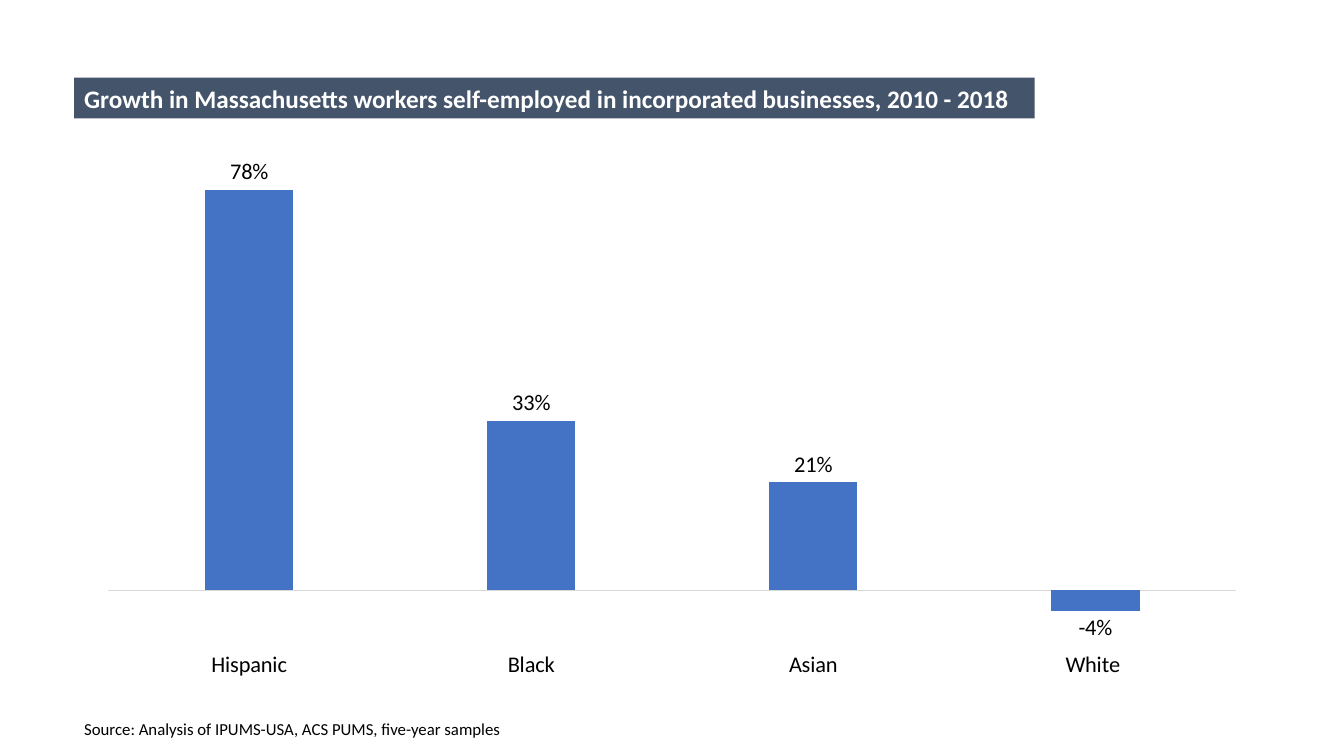
import pptx
import pptx.chart.data
import pptx.dml.color
import pptx.enum.chart
import pptx.enum.shapes
import pptx.enum.text
import pptx.oxml
import pptx.oxml.ns
import pptx.util

Pt = pptx.util.Pt
FONT = "Calibri"
COLOURS = {
    "banner": "44546A",
    "banner_text": "FFFFFF",
    "text": "000000",
    "bar": "4472C4",
    "axis": "D9D9D9",
}
GROWTH = {"Hispanic": 0.78, "Black": 0.33, "Asian": 0.21, "White ": -0.04}


def colour(name):
    """Return the named colour."""
    return pptx.dml.color.RGBColor.from_string(COLOURS[name])


def style_font(font, size, name="text", bold=False):
    """Set the typeface, size, colour and weight of a font."""
    font.name = FONT
    font.size = Pt(size)
    font.bold = bold
    font.color.rgb = colour(name)


def add_banner(slide, left, top, width, height):
    """Place the headline on its dark band."""
    banner = slide.shapes.add_shape(
        pptx.enum.shapes.MSO_SHAPE.RECTANGLE,
        Pt(left), Pt(top), Pt(width), Pt(height))
    banner.shadow.inherit = False
    banner.fill.solid()
    banner.fill.fore_color.rgb = colour("banner")
    banner.line.fill.background()
    banner.text_frame.word_wrap = True
    headline = banner.text_frame.paragraphs[0]
    headline.text = ("Growth in Massachusetts workers self-employed in "
                     "incorporated businesses, 2010 - 2018")
    headline.alignment = pptx.enum.text.PP_ALIGN.LEFT
    style_font(headline.font, 18, "banner_text", bold=True)


def set_plot_layout(chart, x, y, w, h):
    """Fix the inner plot area as fractions of the chart."""
    plot_area = chart._chartSpace.chart.plotArea
    for layout in plot_area.findall(pptx.oxml.ns.qn("c:layout")):
        plot_area.remove(layout)
    plot_area.insert(0, pptx.oxml.parse_xml(
        f'<c:layout {pptx.oxml.ns.nsdecls("c")}><c:manualLayout>'
        '<c:layoutTarget val="inner"/>'
        '<c:xMode val="edge"/><c:yMode val="edge"/>'
        f'<c:x val="{x}"/><c:y val="{y}"/><c:w val="{w}"/><c:h val="{h}"/>'
        '</c:manualLayout></c:layout>'))


def add_growth_chart(slide, left, top, width, height):
    """Place the column chart of growth by group."""
    growth = pptx.chart.data.CategoryChartData(number_format="0%")
    growth.categories = list(GROWTH)
    growth.add_series("Series 1", list(GROWTH.values()))
    chart = slide.shapes.add_chart(
        pptx.enum.chart.XL_CHART_TYPE.COLUMN_CLUSTERED,
        Pt(left), Pt(top), Pt(width), Pt(height), growth).chart
    chart.has_legend = False
    chart.has_title = False
    style_font(chart.font, 10)
    set_plot_layout(chart, 0.02, 0.016, 0.96, 0.9)

    groups = chart.category_axis
    groups.tick_label_position = pptx.enum.chart.XL_TICK_LABEL_POSITION.LOW
    groups.major_tick_mark = pptx.enum.chart.XL_TICK_MARK.NONE
    groups.format.line.color.rgb = colour("axis")
    groups.format.line.width = Pt(0.75)
    style_font(groups.tick_labels.font, 16)

    rates = chart.value_axis
    rates.minimum_scale = -0.1
    rates.maximum_scale = 0.9
    rates.has_major_gridlines = False
    rates.visible = False

    columns = chart.plots[0]
    columns.gap_width = 219
    columns.overlap = -27
    columns.vary_by_categories = False
    bars = columns.series[0]
    bars.invert_if_negative = False
    bars.format.fill.solid()
    bars.format.fill.fore_color.rgb = colour("bar")
    labels = bars.data_labels
    labels.show_value = True
    labels.number_format = "0%"
    labels.number_format_is_linked = False
    labels.position = pptx.enum.chart.XL_LABEL_POSITION.OUTSIDE_END
    style_font(labels.font, 16)


def add_source(slide, left, top, width, height):
    """Place the source line."""
    frame = slide.shapes.add_textbox(
        Pt(left), Pt(top), Pt(width), Pt(height)).text_frame
    frame.word_wrap = True
    source = frame.paragraphs[0]
    source.text = "Source: Analysis of IPUMS-USA, ACS PUMS, five-year samples"
    style_font(source.font, 12)


def main():
    """Build the slide and save it."""
    deck = pptx.Presentation()
    deck.slide_width = Pt(960)
    deck.slide_height = Pt(540)
    slide = deck.slides.add_slide(deck.slide_layouts[6])
    add_banner(slide, 53, 55.5, 686, 29)
    add_growth_chart(slide, 60.5, 85, 839.5, 407.5)
    add_source(slide, 53, 510, 400, 18)
    deck.save("out.pptx")


if __name__ == "__main__":
    main()
